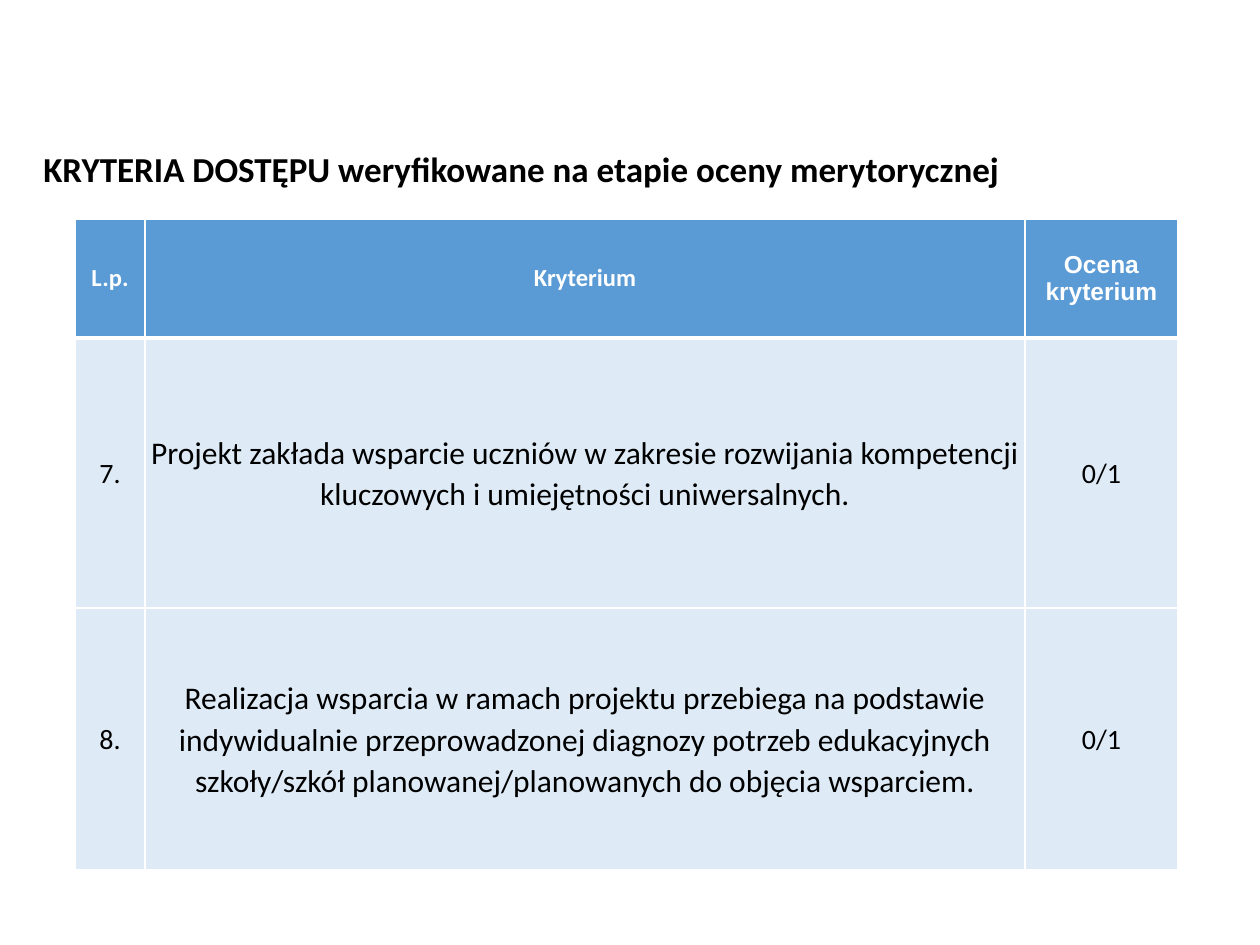
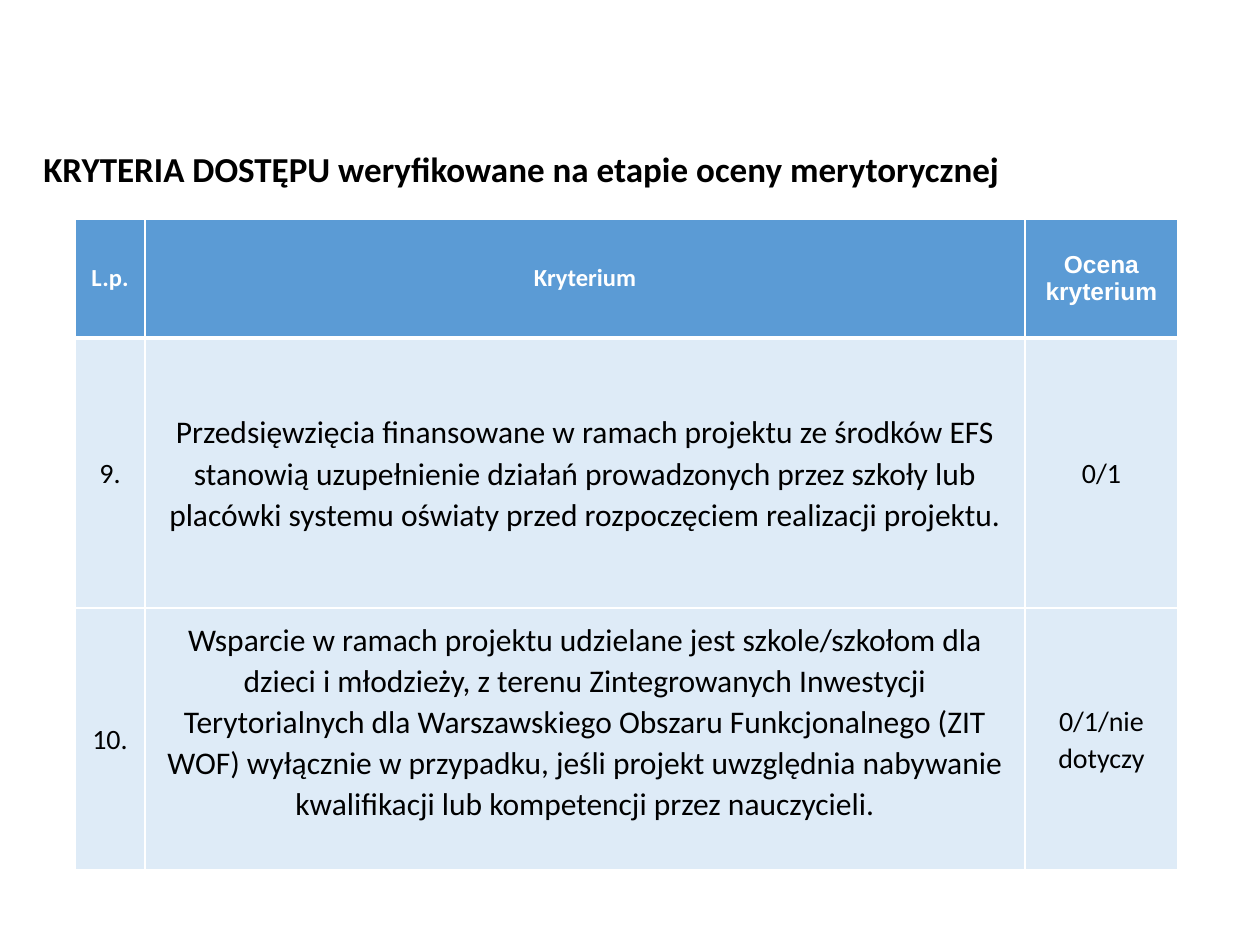
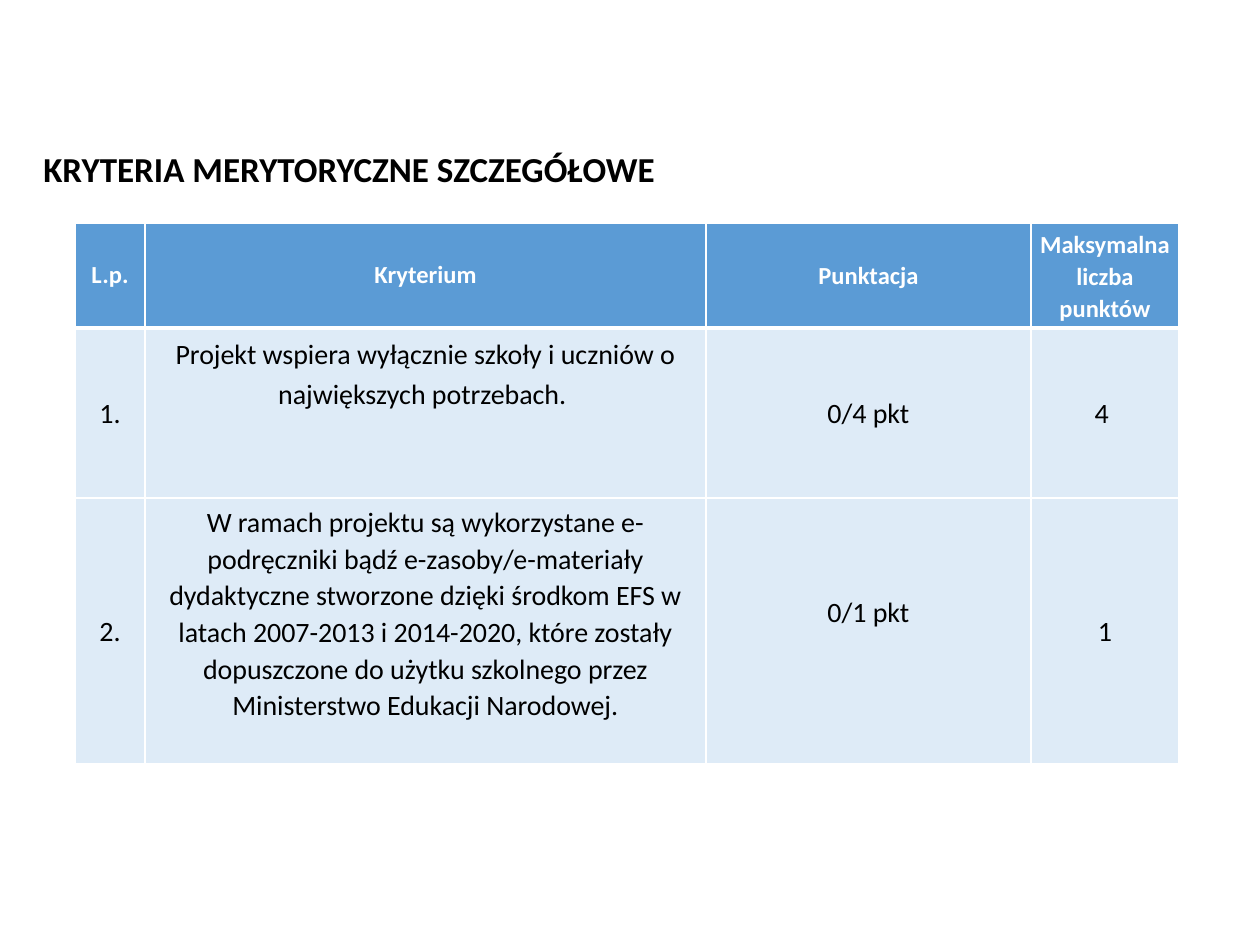
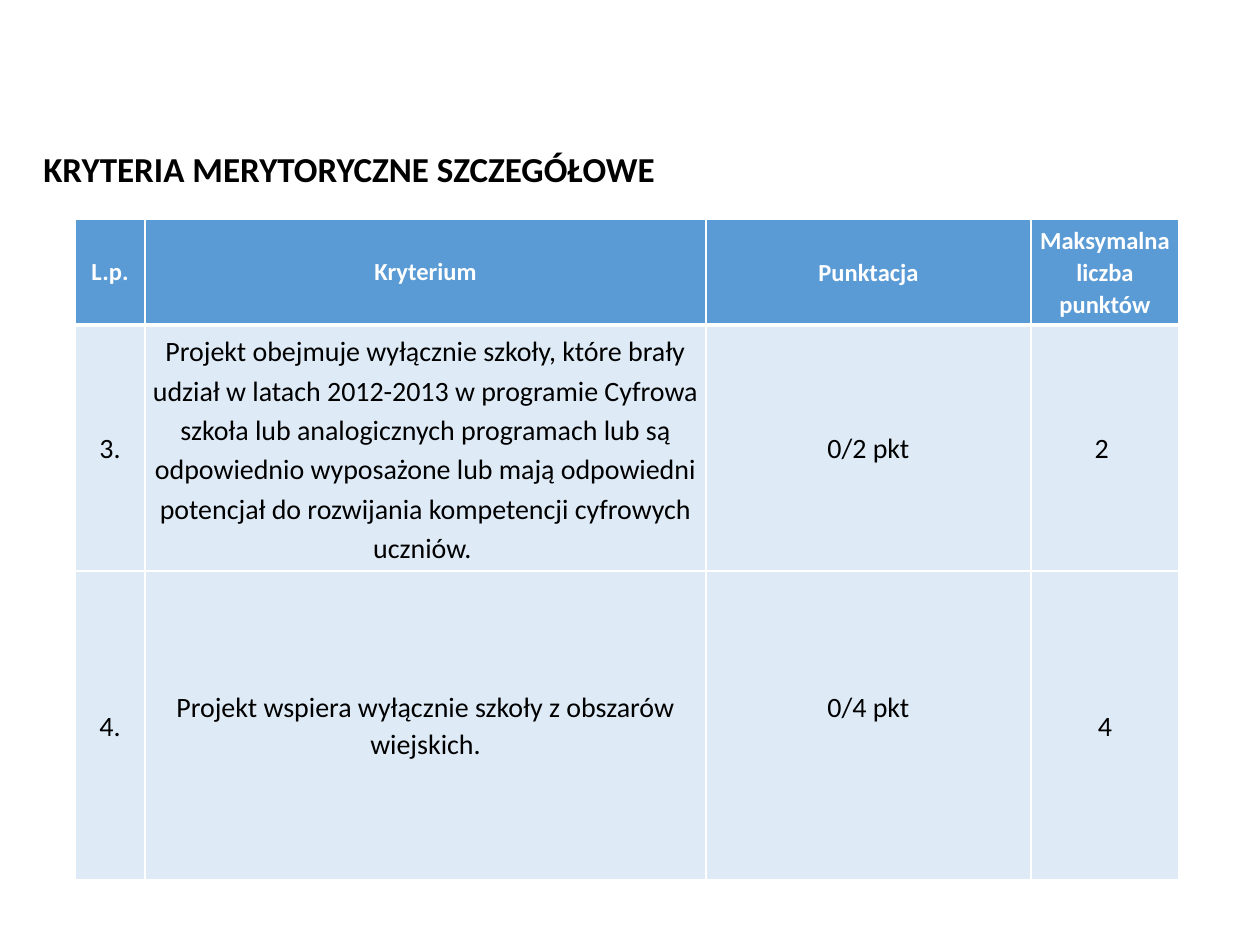
from lxml import etree
from pptx import Presentation
from pptx.dml.color import RGBColor
from pptx.enum.text import MSO_ANCHOR, MSO_AUTO_SIZE, PP_ALIGN
from pptx.oxml.ns import qn
from pptx.util import Emu, Pt

CENTER = PP_ALIGN.CENTER
MIDDLE, TOP = MSO_ANCHOR.MIDDLE, MSO_ANCHOR.TOP
FIT_SHAPE = MSO_AUTO_SIZE.SHAPE_TO_FIT_TEXT

FONT = "Calibri"
BLUE, PALE, WHITE, BLACK = "5B9BD5", "DEEBF7", "FFFFFF", "000000"

# Content: each body row is number, criterion, then the score cells
ACCESS = "KRYTERIA DOSTĘPU weryfikowane na etapie oceny merytorycznej"
DETAILED = "KRYTERIA MERYTORYCZNE SZCZEGÓŁOWE"
ACCESS_HEAD = ["L.p.", "Kryterium", "Ocena kryterium"]
DETAILED_HEAD = ["L.p.", "Kryterium", "Punktacja", "Maksymalna liczba punktów"]
ACCESS_COLS = [70, 880, 153]
DETAILED_COLS = [70, 561, 325, 148]

SLIDES = [
    dict(title=ACCESS, head=ACCESS_HEAD, cols=ACCESS_COLS, top=219, heights=[119, 270, 262], rows=[
        ["7.", "Projekt zakłada wsparcie uczniów w zakresie rozwijania kompetencji kluczowych "
               "i umiejętności uniwersalnych.", "0/1"],
        ["8.", "Realizacja wsparcia w ramach projektu przebiega na podstawie indywidualnie "
               "przeprowadzonej diagnozy potrzeb edukacyjnych szkoły/szkół "
               "planowanej/planowanych do objęcia wsparciem.", "0/1"],
    ]),
    dict(title=ACCESS, head=ACCESS_HEAD, cols=ACCESS_COLS, top=219, heights=[119, 270, 262], rows=[
        ["9.", "Przedsięwzięcia finansowane w ramach projektu ze środków EFS stanowią "
               "uzupełnienie działań prowadzonych przez szkoły lub placówki systemu oświaty "
               "przed rozpoczęciem realizacji projektu.", "0/1"],
        ["10.", "Wsparcie w ramach projektu udzielane jest szkole/szkołom dla dzieci i młodzieży, "
                "z terenu Zintegrowanych Inwestycji Terytorialnych dla Warszawskiego Obszaru "
                "Funkcjonalnego (ZIT WOF) wyłącznie w przypadku, jeśli projekt uwzględnia "
                "nabywanie kwalifikacji lub kompetencji przez nauczycieli.", "0/1/nie dotyczy"],
    ]),
    dict(title=DETAILED, head=DETAILED_HEAD, cols=DETAILED_COLS, top=223, heights=[105, 170, 266], rows=[
        ["1.", "Projekt wspiera wyłącznie szkoły i uczniów o największych potrzebach. ",
         "0/4 pkt", "4 "],
        ["2.", "W ramach projektu są wykorzystane e-podręczniki bądź e-zasoby/e-materiały "
               "dydaktyczne stworzone dzięki środkom EFS w latach 2007-2013 i 2014-2020, "
               "które zostały dopuszczone do użytku szkolnego przez Ministerstwo Edukacji "
               "Narodowej.", "0/1 pkt", "1"],
    ]),
    dict(title=DETAILED, head=DETAILED_HEAD, cols=DETAILED_COLS, top=219, heights=[106, 246, 309], rows=[
        ["3.", "Projekt obejmuje wyłącznie szkoły, które brały udział w latach 2012-2013 "
               "w programie Cyfrowa szkoła lub analogicznych programach lub są odpowiednio "
               "wyposażone lub mają odpowiedni potencjał do rozwijania kompetencji cyfrowych "
               "uczniów. ", "0/2 pkt", "2 "],
        ["4.", "Projekt wspiera wyłącznie szkoły z obszarów wiejskich.", "0/4 pkt", "4"],
    ]),
]

# Cells that depart from the rules: (slide, row, column)
RAISED = {(1, 2, 1), (2, 2, 1), (2, 2, 2), (3, 2, 2)}
TOP_ALIGNED = {(2, 1, 1), (3, 1, 1)}
SINGLE_SPACED = {(2, 2, 2), (3, 2, 2)}

TABLE_LEFT = 75
TITLE_BOX = (31, 141, 1148, 55)
# Left and right, top, bottom
WIDE_INSET, INSET, RAISED_INSET = (13, 6, 6), (5, 5, 5), (8, 5, 40)


def px(n):
    return Emu(round(n * 914400 / 126))


def color(hex_string):
    return RGBColor.from_string(hex_string)


def style(p, size, hex_string, bold, font=FONT):
    for r in p.runs:
        r.font.size, r.font.bold, r.font.name = Pt(size), bold, font
        r.font.color.rgb = color(hex_string)


def set_borders(cell, widths):
    tcPr = cell._tc.get_or_add_tcPr()
    for side, width in widths.items():
        ln = etree.SubElement(tcPr, qn("a:ln" + side), w=str(Pt(width)))
        fill = etree.SubElement(ln, qn("a:solidFill"))
        etree.SubElement(fill, qn("a:srgbClr"), val=WHITE)


def fill_cell(cell, text, key):
    slide, row, col = key
    header = row == 0
    scored = len(SLIDES[slide]["cols"]) == 4

    # Borders go before the fill in the cell properties
    set_borders(cell, {"L": 1, "R": 1, "T": 3 if row == 1 else 1, "B": 3 if header else 1})
    cell.fill.solid()
    cell.fill.fore_color.rgb = color(BLUE if header else PALE)

    # Numbers and plain headers keep the wide inset
    wide = col == 0 or header and (col == 1 or not scored)
    side, top, bottom = RAISED_INSET if key in RAISED else WIDE_INSET if wide else INSET
    cell.margin_left = cell.margin_right = px(side)
    cell.margin_top, cell.margin_bottom = px(top), px(bottom)
    cell.vertical_anchor = TOP if key in TOP_ALIGNED else MIDDLE

    cell.text_frame.text = text
    p = cell.text_frame.paragraphs[0]
    p.alignment = CENTER
    if key in TOP_ALIGNED:
        p.line_spacing = 1.15
    elif not (header and wide) and key not in SINGLE_SPACED:
        p.line_spacing = 1.07

    if header:
        style(p, 14, WHITE, True, "Arial" if col == 2 and not scored else FONT)
    else:
        style(p, 18 if col == 1 and not scored else 16, BLACK, False)


def add_criteria_table(s, index, data):
    cols, heights = data["cols"], data["heights"]
    frame = s.shapes.add_table(len(heights), len(cols), px(TABLE_LEFT), px(data["top"]),
                               px(sum(cols)), px(sum(heights)))
    table = frame.table
    table.horz_banding = False
    for column, width in zip(table.columns, cols):
        column.width = px(width)
    for row, height in zip(table.rows, heights):
        row.height = px(height)
    for i, texts in enumerate([data["head"]] + data["rows"]):
        for j, text in enumerate(texts):
            fill_cell(table.cell(i, j), text, (index, i, j))


def add_title(s, text):
    tf = s.shapes.add_textbox(*map(px, TITLE_BOX)).text_frame
    tf.word_wrap = True
    tf.auto_size = FIT_SHAPE
    tf.vertical_anchor = MIDDLE
    tf.text = text
    style(tf.paragraphs[0], 20, BLACK, True)


def main():
    prs = Presentation()
    prs.slide_width, prs.slide_height = px(1260), px(945)
    for index, data in enumerate(SLIDES):
        s = prs.slides.add_slide(prs.slide_layouts[6])
        add_criteria_table(s, index, data)
        add_title(s, data["title"])
    prs.save("out.pptx")


if __name__ == "__main__":
    main()
